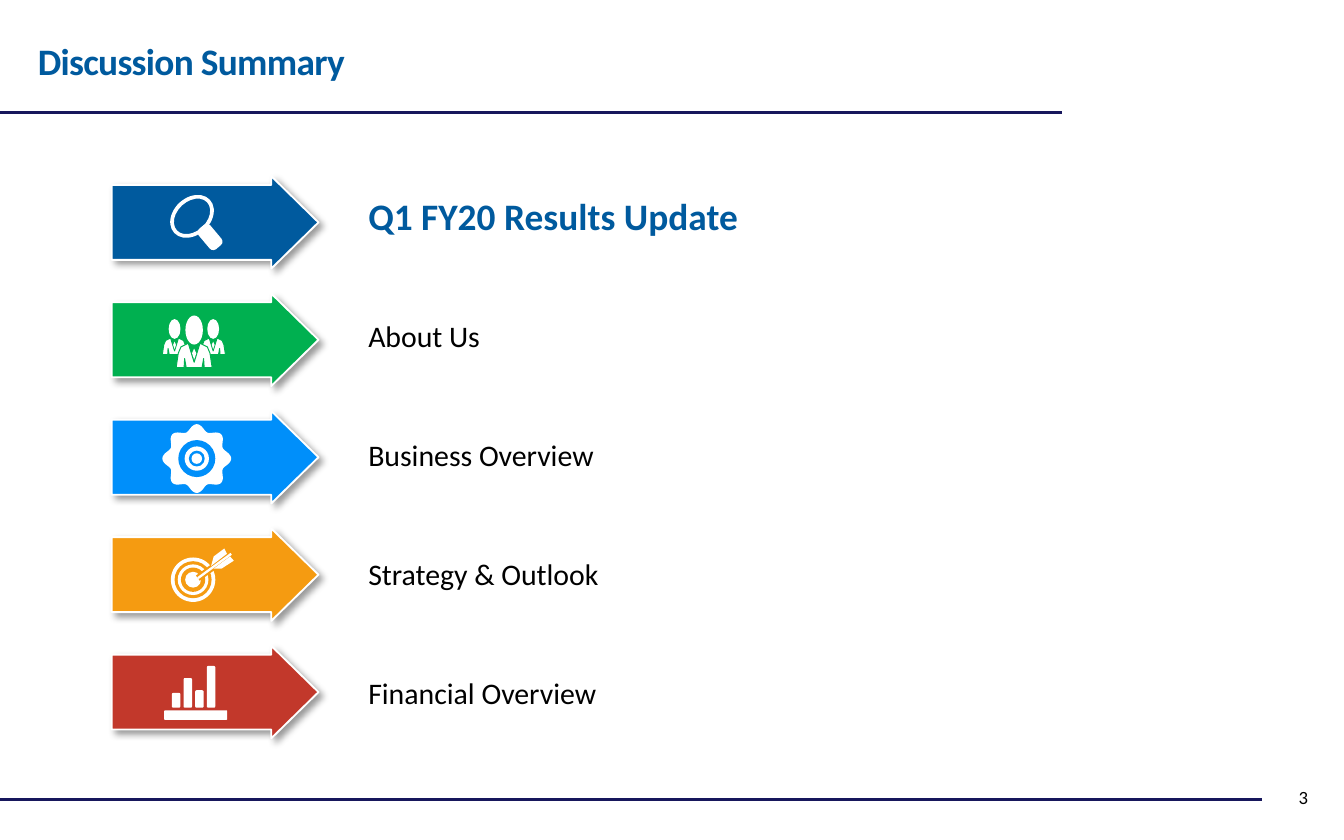
from math import cos, pi, sin

from lxml import etree
from pptx import Presentation
from pptx.dml.color import RGBColor
from pptx.enum.shapes import MSO_CONNECTOR, MSO_SHAPE
from pptx.enum.text import MSO_ANCHOR, MSO_AUTO_SIZE, PP_ALIGN
from pptx.oxml import parse_xml
from pptx.oxml.ns import nsdecls, qn
from pptx.util import Cm, Pt

OVAL, DONUT = MSO_SHAPE.OVAL, MSO_SHAPE.DONUT
ROUNDED, ARROW = MSO_SHAPE.ROUNDED_RECTANGLE, MSO_SHAPE.RIGHT_ARROW
MIDDLE = MSO_ANCHOR.MIDDLE
STRAIGHT = MSO_CONNECTOR.STRAIGHT

FONT = "Calibri"
WHITE = RGBColor(0xFF, 0xFF, 0xFF)
BLACK = RGBColor(0x00, 0x00, 0x00)
NAVY = RGBColor(0x17, 0x17, 0x5C)
BLUE = RGBColor(0x00, 0x5A, 0x9E)
GREEN = RGBColor(0x00, 0xB0, 0x50)
SKY = RGBColor(0x00, 0x8F, 0xFA)
ORANGE = RGBColor(0xF5, 0x9B, 0x11)
RED = RGBColor(0xC2, 0x38, 0x2B)

TITLE = "Discussion Summary"
PAGE_NUMBER = "3"
RULES = [(2.13, 20.07), (15.11, 23.85)]  # top, right end

# All lengths are in centimetres; icon parts are measured from their arrow's corner.
ARROW_LEFT, ARROW_TOP, ARROW_PITCH = 2.11, 3.33, 2.22
ARROW_WIDTH, ARROW_HEIGHT = 3.91, 1.75
TABLE_LEFT, TABLE_TOP, TABLE_WIDTH, ROW_HEIGHT = 6.76, 3.0, 7.44, 2.25

BODY_HALF = [(0, 0.89), (0.11, 0.53), (0.25, 0.6), (0.3, 0.72), (0.34, 0.99),
             (0.19, 0.99), (0.18, 0.82), (0.15, 0.99)]
TIE = [(0, 0.63), (0.04, 0.72), (0, 0.84), (-0.04, 0.72)]
PEOPLE = [(1.19, 0.48, 0.68), (1.92, 0.48, 0.68), (1.56, 0.41, 1)]  # centre, top, scale
FEATHERS = [
    [(2.24, 0.53), (2.31, 0.61), (2.08, 0.76), (1.93, 0.76)],
    [(2.13, 0.38), (2.18, 0.48), (1.88, 0.71), (1.93, 0.53)],
]
BAR_HEIGHTS = [0.28, 0.56, 0.33, 0.79]

presentation = Presentation()
presentation.slide_width, presentation.slide_height = Cm(25.4), Cm(15.88)
slide = presentation.slides.add_slide(presentation.slide_layouts[5])


def style(shape, fill):
    shape.shadow.inherit = False
    shape.fill.solid()
    shape.fill.fore_color.rgb = fill
    shape.line.fill.background()
    return shape


def add_centred(kind, origin, x, y, width, height, fill=WHITE, rotation=0):
    shape = slide.shapes.add_shape(
        kind, Cm(origin[0] + x - width / 2), Cm(origin[1] + y - height / 2),
        Cm(width), Cm(height))
    shape.rotation = rotation
    return style(shape, fill)


def add_outline(origin, points, fill=WHITE):
    corners = [(Cm(origin[0] + x), Cm(origin[1] + y)) for x, y in points]
    builder = slide.shapes.build_freeform(*corners[0], scale=1.0)
    builder.add_line_segments(corners[1:], close=True)
    return style(builder.convert_to_shape(), fill)


def add_line(start, end, color, width):
    line = slide.shapes.add_connector(
        STRAIGHT, Cm(start[0]), Cm(start[1]), Cm(end[0]), Cm(end[1]))
    line.line.color.rgb = color
    line.line.width = Pt(width)
    etree.SubElement(line._element.spPr, qn("a:effectLst"))


def add_rings(origin, x, y, radii, colors):
    """Stack discs of alternating colours, largest first."""
    for index, radius in enumerate(radii):
        add_centred(OVAL, origin, x, y, 2 * radius, 2 * radius, colors[index % 2])


def draw_magnifier(origin, color):
    lens = add_centred(DONUT, origin, 1.52, 0.76, 0.92, 0.7, rotation=-43)
    lens.adjustments[0] = 0.1
    handle = add_centred(ROUNDED, origin, 1.86, 1.15, 0.29, 0.5, rotation=-40)
    handle.adjustments[0] = 0.3


def draw_team(origin, color):
    body = BODY_HALF + [(-x, y) for x, y in reversed(BODY_HALF[1:])]
    for x, y, scale in PEOPLE:
        add_centred(OVAL, origin, x, y + 0.28 * scale, 0.33 * scale, 0.55 * scale)
        for points in (body, TIE):
            placed = [(x + scale * px, y + scale * py) for px, py in points]
            part = add_outline(origin, placed)
            if points is body:
                part.line.color.rgb = color
                part.line.width = Pt(0.5)


def draw_gear(origin, color):
    x, y, steps = 1.61, 0.9, 160
    angles = [2 * pi * step / steps for step in range(steps)]
    radii = [0.59 + 0.06 * cos(8 * angle) for angle in angles]
    add_outline(origin, [(x + radius * cos(angle), y + radius * sin(angle))
                         for radius, angle in zip(radii, angles)])
    add_rings(origin, x, y, [0.35, 0.23, 0.15, 0.1], (color, WHITE))


def draw_target(origin, color):
    add_rings(origin, 1.54, 0.97, [0.42, 0.35, 0.29, 0.23, 0.15], (WHITE, color))
    start, end = [(origin[0] + x, origin[1] + y) for x, y in [(1.63, 0.94), (2.26, 0.48)]]
    add_line(start, end, color, 3.5)
    for feather in FEATHERS:
        add_outline(origin, feather)
    add_line(start, end, WHITE, 1.25)


def draw_bars(origin, color):
    add_centred(ROUNDED, origin, 1.59, 1.31, 1.19, 0.18).adjustments[0] = 0.08
    for index, height in enumerate(BAR_HEIGHTS):
        add_centred(ROUNDED, origin, 1.22 + 0.22 * index, 1.17 - height / 2, 0.16, height)


TOPICS = [
    ("Q1 FY20 Results Update", BLUE, draw_magnifier),
    ("About Us", GREEN, draw_team),
    ("Business Overview", SKY, draw_gear),
    ("Strategy & Outlook", ORANGE, draw_target),
    ("Financial Overview", RED, draw_bars),
]


def set_font(paragraph, size, color, bold=False):
    font = paragraph.font
    font.name, font.size, font.bold = FONT, Pt(size), bold
    font.color.rgb = color


def add_topic_arrow(origin, color):
    arrow = add_centred(ARROW, origin, ARROW_WIDTH / 2, ARROW_HEIGHT / 2,
                        ARROW_WIDTH, ARROW_HEIGHT, color)
    arrow.adjustments[0], arrow.adjustments[1] = 0.81, 0.51
    arrow.line.color.rgb = WHITE
    arrow.line.width = Pt(1)
    effects = arrow._element.spPr.find(qn("a:effectLst"))
    effects.append(parse_xml(
        f'<a:outerShdw {nsdecls("a")} blurRad="50800" dist="38100" dir="2700000" '
        'algn="tl" rotWithShape="0"><a:srgbClr val="000000"><a:alpha val="40000"/>'
        '</a:srgbClr></a:outerShdw>'))


for top, right in RULES:
    add_line((0, top), (right, top), NAVY, 1.75)

title = slide.shapes.title
title.left, title.top, title.width, title.height = Cm(0.46), Cm(0.58), Cm(21.21), Cm(1.12)
title.text_frame.text = TITLE
title.text_frame.auto_size = MSO_AUTO_SIZE.NONE
title.text_frame.vertical_anchor = MIDDLE
heading = title.text_frame.paragraphs[0]
heading.alignment = PP_ALIGN.LEFT
set_font(heading, 20, BLUE, True)
heading.runs[0]._r.get_or_add_rPr().set("spc", "-40")

number = slide.shapes.add_textbox(Cm(19.69), Cm(14.53), Cm(5.28), Cm(1.07)).text_frame
number.word_wrap = True
number.vertical_anchor = MIDDLE
number.text = PAGE_NUMBER
number.paragraphs[0].alignment = PP_ALIGN.RIGHT
set_font(number.paragraphs[0], 10, BLACK)

table = slide.shapes.add_table(
    len(TOPICS), 1, Cm(TABLE_LEFT), Cm(TABLE_TOP), Cm(TABLE_WIDTH),
    Cm(ROW_HEIGHT * len(TOPICS))).table
table.first_row = table.horz_banding = False

for index, (label, color, draw_icon) in enumerate(TOPICS):
    cell = table.cell(index, 0)
    cell.fill.solid()
    cell.fill.fore_color.rgb = WHITE
    cell.vertical_anchor = MIDDLE
    cell.margin_left = cell.margin_right = Cm(0.2)
    cell.margin_top = cell.margin_bottom = Cm(0.1)
    cell.text = label
    current = index == 0
    set_font(cell.text_frame.paragraphs[0], 20 if current else 16,
             BLUE if current else BLACK, current)

    corner = (ARROW_LEFT, ARROW_TOP + index * ARROW_PITCH)
    add_topic_arrow(corner, color)
    draw_icon(corner, color)

presentation.save("out.pptx")
